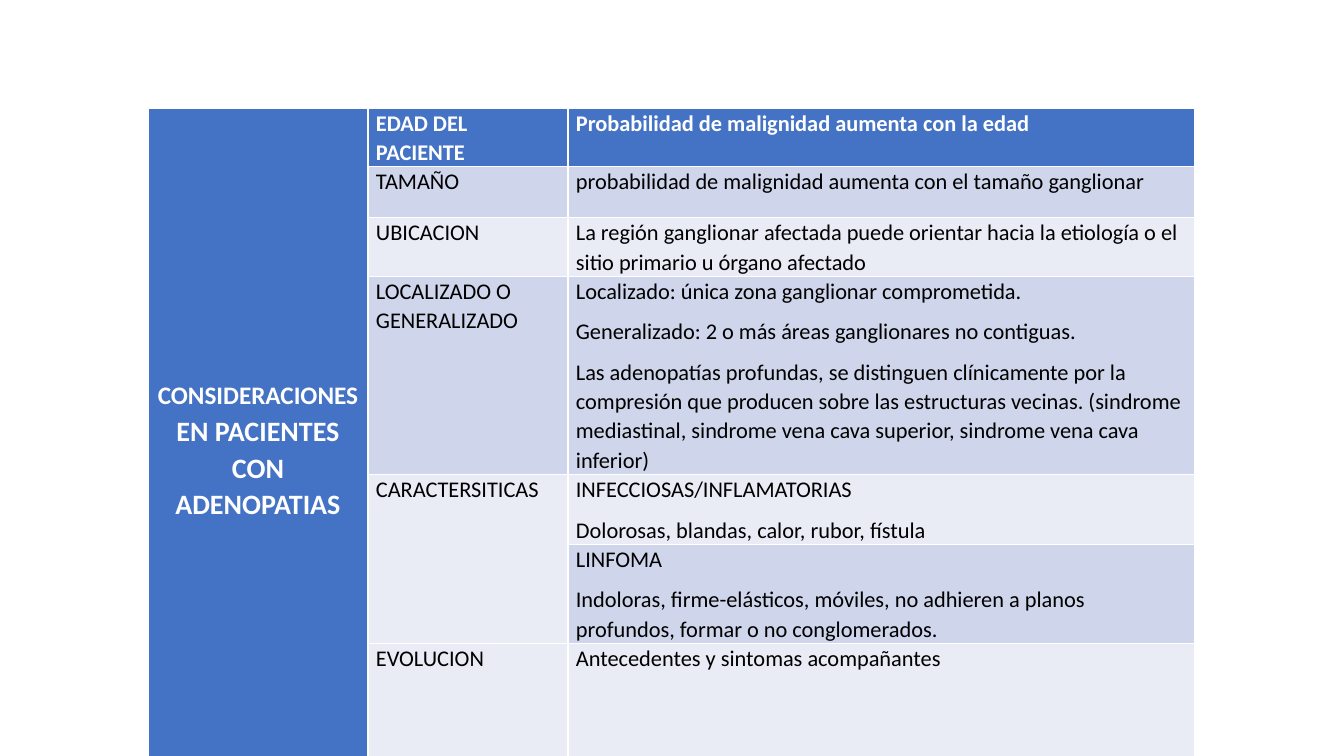
import pptx
import pptx.dml.color
import pptx.enum.text
import pptx.util
from pptx.dml.color import RGBColor

PX = 914400 / 100.8
PAGE_SIZE = (1344, 756)
TABLE_ORIGIN = (148, 108)
COLUMN_WIDTHS = (220, 200, 627)
ROW_HEIGHTS = (25, 51, 51, 185, 67, 93, 25)
SIDE_MARGIN = 8

FONT = "Calibri"
WHITE = RGBColor(0xFF, 0xFF, 0xFF)
BLACK = RGBColor(0x00, 0x00, 0x00)
BLUE = RGBColor(0x44, 0x72, 0xC4)
BAND_DARK = RGBColor(0xCF, 0xD5, 0xEA)
BAND_LIGHT = RGBColor(0xE9, 0xEB, 0xF5)

TITLE_SPANS = (("CONSIDERACIONES", 18), (" EN PACIENTES CON ADENOPATIAS", 20))
CONSIDERATIONS = (
    ("EDAD DEL PACIENTE", ["Probabilidad de malignidad aumenta con la edad"]),
    ("TAMAÑO", ["probabilidad de malignidad aumenta con el tamaño ganglionar"]),
    ("UBICACION", [
        "La región ganglionar afectada puede orientar hacia la etiología o el "
        "sitio primario u órgano afectado"]),
    ("LOCALIZADO O GENERALIZADO", [
        "Localizado: única zona ganglionar comprometida.",
        "Generalizado: 2 o más áreas ganglionares no contiguas.",
        "Las adenopatías profundas, se distinguen clínicamente por la compresión "
        "que producen sobre las estructuras vecinas. (sindrome mediastinal, "
        "sindrome vena cava superior, sindrome vena cava inferior)"]),
    ("CARACTERSITICAS", [
        "INFECCIOSAS/INFLAMATORIAS",
        "Dolorosas, blandas, calor, rubor, fístula"]),
    ("", [
        "LINFOMA",
        "Indoloras, firme-elásticos, móviles, no adhieren a planos profundos, "
        "formar o no conglomerados."]),
    ("EVOLUCION", ["Antecedentes y sintomas acompañantes"]),
)


def px(length):
    return pptx.util.Emu(round(length * PX))


def style_cell(cell, fill):
    cell.fill.solid()
    cell.fill.fore_color.rgb = fill
    cell.margin_left = cell.margin_right = px(SIDE_MARGIN)
    cell.margin_top = cell.margin_bottom = 0


def write_cell(cell, paragraphs, colour, bold):
    """Each paragraph is a sequence of (text, size in points) spans."""
    for index, spans in enumerate(paragraphs):
        frame = cell.text_frame
        para = frame.add_paragraph() if index else frame.paragraphs[0]
        para.line_spacing = 1.07
        para.space_after = pptx.util.Pt(8)
        for text, size in spans:
            span = para.add_run()
            span.text = text
            span.font.name = FONT
            span.font.size = pptx.util.Pt(size)
            span.font.bold = bold
            span.font.color.rgb = colour


def add_considerations_table(page, left, top):
    """The default table style supplies the white cell borders."""
    table = page.shapes.add_table(
        len(ROW_HEIGHTS), len(COLUMN_WIDTHS), px(left), px(top),
        px(sum(COLUMN_WIDTHS)), px(sum(ROW_HEIGHTS))).table
    for column, width in zip(table.columns, COLUMN_WIDTHS):
        column.width = px(width)

    for index, (label, details) in enumerate(CONSIDERATIONS):
        table.rows[index].height = px(ROW_HEIGHTS[index])
        header = index == 0
        band = BLUE if header else BAND_DARK if index % 2 else BAND_LIGHT
        for column, texts in enumerate(([], [label], details)):
            cell = table.cell(index, column)
            style_cell(cell, band if column else BLUE)
            write_cell(cell, [[(text, 16)] for text in texts if text],
                       WHITE if header else BLACK, header)

    title = table.cell(0, 0)
    title.merge(table.cell(len(ROW_HEIGHTS) - 1, 0))
    title.vertical_anchor = pptx.enum.text.MSO_ANCHOR.MIDDLE
    write_cell(title, [TITLE_SPANS], WHITE, True)
    title.text_frame.paragraphs[0].alignment = pptx.enum.text.PP_ALIGN.CENTER
    table.cell(4, 1).merge(table.cell(5, 1))


def main():
    deck = pptx.Presentation()
    deck.slide_width, deck.slide_height = map(px, PAGE_SIZE)
    page = deck.slides.add_slide(deck.slide_layouts[6])
    add_considerations_table(page, *TABLE_ORIGIN)
    deck.save("out.pptx")


if __name__ == "__main__":
    main()
